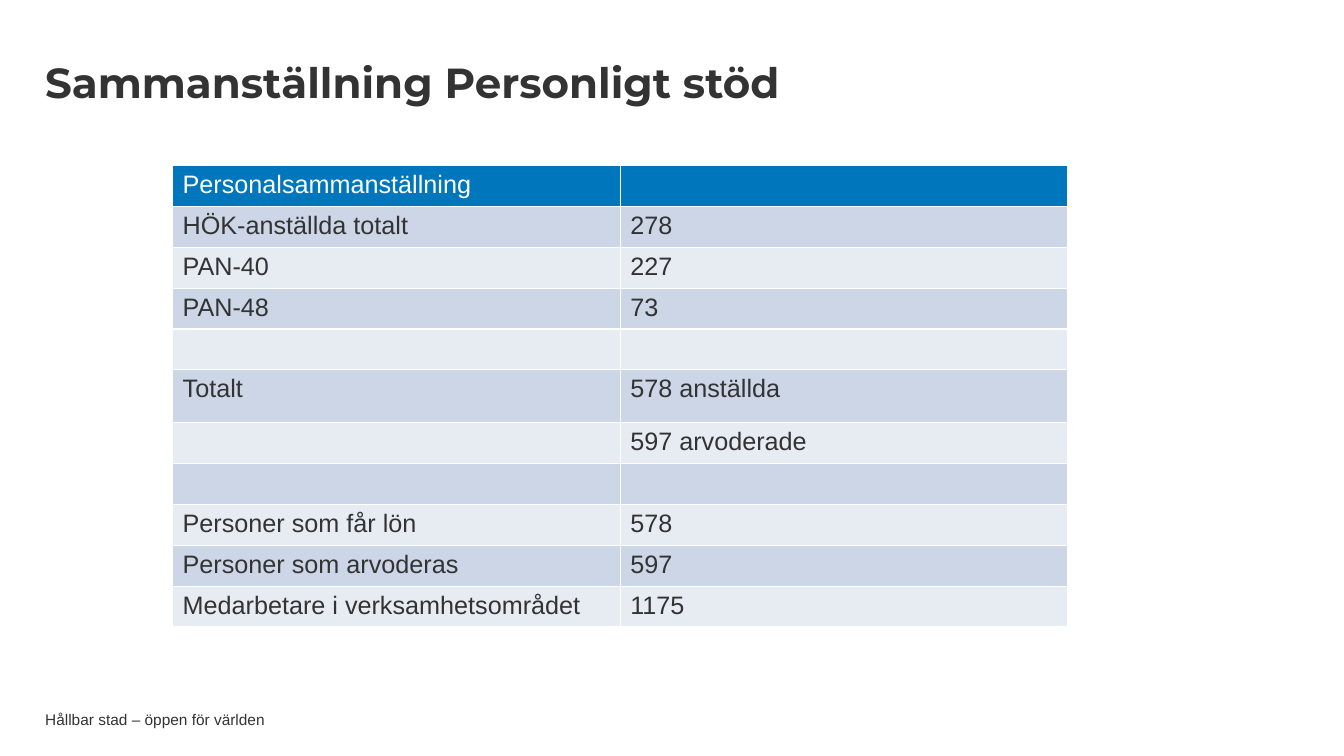
from lxml import etree
from pptx import Presentation
from pptx.dml.color import RGBColor
from pptx.enum.text import MSO_ANCHOR
from pptx.oxml.ns import qn
from pptx.util import Cm, Pt

MIDDLE = MSO_ANCHOR.MIDDLE
DARK = RGBColor(0x33, 0x33, 0x33)
WHITE = RGBColor(0xFF, 0xFF, 0xFF)
HEADER_BLUE = RGBColor(0x00, 0x77, 0xBC)
BAND_DARK = RGBColor(0xCC, 0xD6, 0xE7)
BAND_LIGHT = RGBColor(0xE7, 0xEC, 0xF3)

ROWS = [
    ("Personalsammanställning", ""),
    ("HÖK-anställda totalt", "278"),
    ("PAN-40", "227"),
    ("PAN-48", "73"),
    ("", ""),
    ("Totalt", "578 anställda"),
    ("", "597 arvoderade"),
    ("", ""),
    ("Personer som får lön", "578"),
    ("Personer som arvoderas", "597"),
    ("Medarbetare i verksamhetsområdet", "1175"),
]
TOTAL_ROW = 5
ROW_HEIGHT, TOTAL_HEIGHT = Cm(1.03), Cm(1.33)
COLUMN_WIDTH = Cm(11.28)


def style_font(paragraph, name, size, color, bold=False):
    font = paragraph.font
    font.name, font.size, font.bold = name, Pt(size), bold
    font.color.rgb = color


def add_text(slide, text, left, top, width, height, padding):
    frame = slide.shapes.add_textbox(left, top, width, height).text_frame
    frame.word_wrap = True
    frame.vertical_anchor = MIDDLE
    frame.margin_left = frame.margin_right = 0
    frame.margin_top = frame.margin_bottom = padding
    paragraph = frame.paragraphs[0]
    paragraph.text = text
    return paragraph


presentation = Presentation()
presentation.slide_width, presentation.slide_height = Cm(33.87), Cm(19.05)
slide = presentation.slides.add_slide(presentation.slide_layouts[6])

# Footer
footer = add_text(slide, "Hållbar stad – öppen för världen",
                  Cm(1.14), Cm(17.93), Cm(24), Cm(0.41), 0)
style_font(footer, "Arial", 11, DARK)

# Title
title = add_text(slide, "Sammanställning Personligt stöd",
                 Cm(1.14), Cm(1.12), Cm(25.48), Cm(2.06), Cm(0.13))
title.line_spacing = 0.9
style_font(title, "Montserrat", 30, DARK, bold=True)

# Staff table
table_height = ROW_HEIGHT * (len(ROWS) - 1) + TOTAL_HEIGHT
table = slide.shapes.add_table(len(ROWS), 2, Cm(4.35), Cm(4.17),
                               COLUMN_WIDTH * 2, table_height).table
for column in table.columns:
    column.width = COLUMN_WIDTH

for row_index, texts in enumerate(ROWS):
    table.rows[row_index].height = TOTAL_HEIGHT if row_index == TOTAL_ROW else ROW_HEIGHT
    if row_index == 0:
        fill_color, text_color = HEADER_BLUE, WHITE
    else:
        fill_color, text_color = (BAND_DARK if row_index % 2 else BAND_LIGHT), DARK
    for column_index, text in enumerate(texts):
        cell = table.cell(row_index, column_index)
        # White cell borders
        properties = cell._tc.get_or_add_tcPr()
        for side in ("a:lnL", "a:lnR", "a:lnT", "a:lnB"):
            line = etree.SubElement(properties, qn(side), w=str(Pt(1)))
            solid = etree.SubElement(line, qn("a:solidFill"))
            etree.SubElement(solid, qn("a:srgbClr"), val=str(WHITE))
        cell.fill.solid()
        cell.fill.fore_color.rgb = fill_color
        paragraph = cell.text_frame.paragraphs[0]
        if text:
            paragraph.text = text
        style_font(paragraph, "Arial", 18, text_color)

presentation.save("out.pptx")
